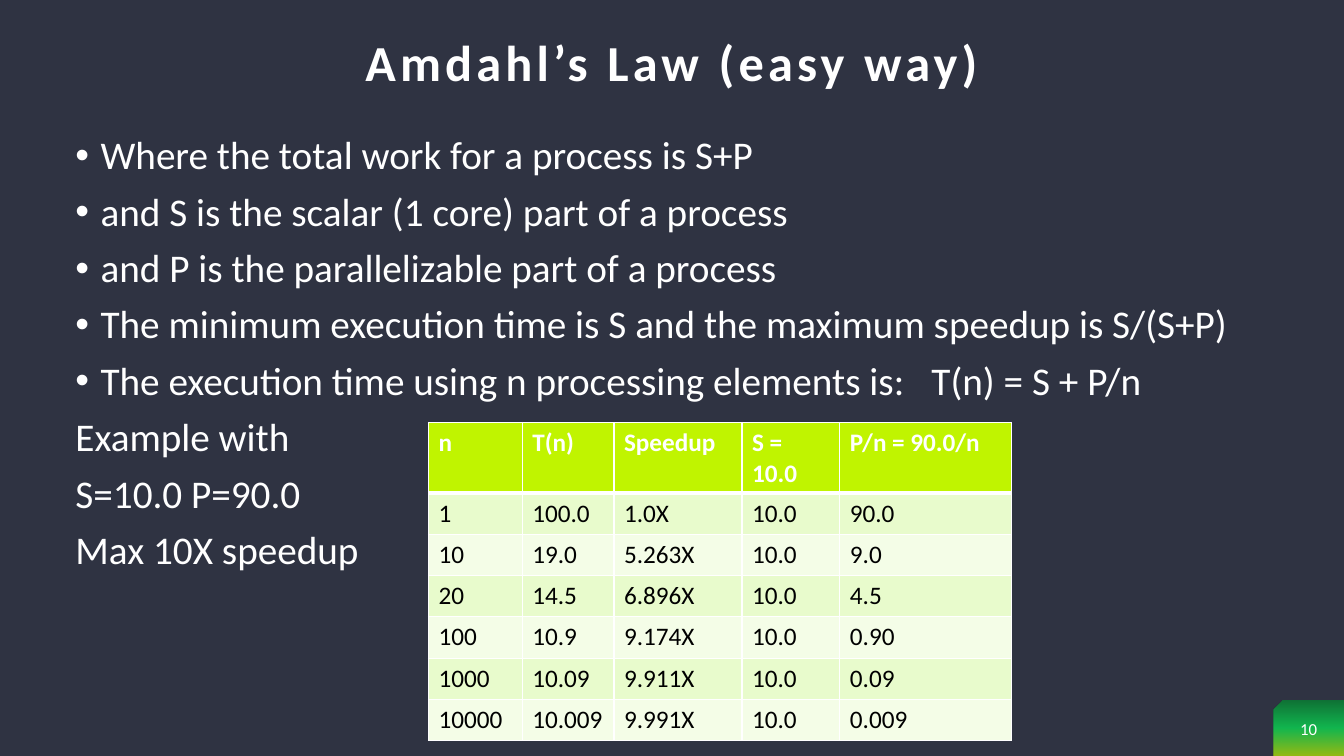
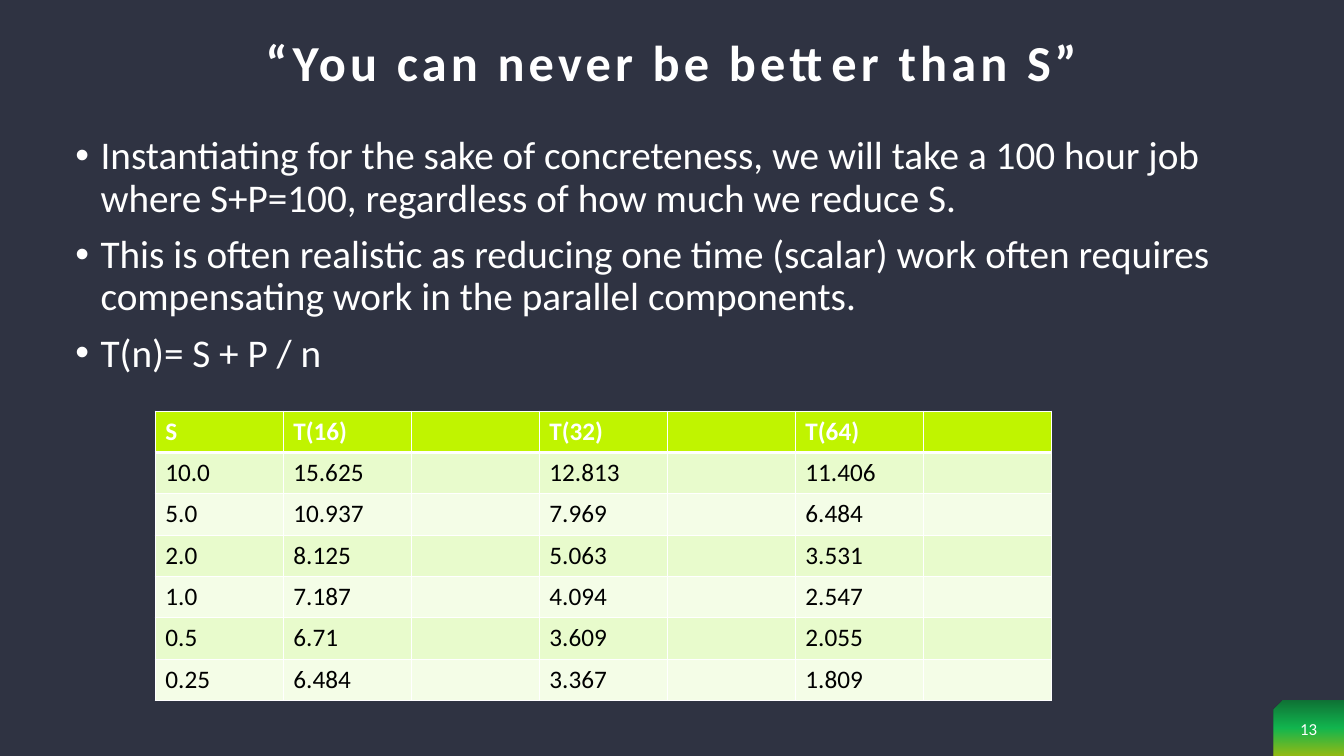
from dataclasses import dataclass

from lxml import etree
from pptx import Presentation
from pptx import util as u
from pptx.dml.color import RGBColor
from pptx.enum import shapes, text
from pptx.oxml import parse_xml
from pptx.oxml.ns import nsdecls, qn


@dataclass(frozen=True)
class Theme:
    font: str = "Calibri"
    background: str = "2F3342"
    light: str = "FFFFFF"
    dark: str = "000000"
    header: str = "C0F400"
    bands: tuple = ("E8FBCC", "F4FDE7")
    badge: tuple = ((0, "038B30"), (50, "05EE55"), (100, "C0F400"))
    badge_opacity: int = 70
    title_size: int = 36
    body_size: int = 28
    table_size: int = 18
    number_size: int = 12
    title_spacing: int = 3
    line_spacing: float = 0.9


class Deck:
    """Holds the style and the slide being built."""

    def __init__(self, theme):
        self.theme = theme
        self.prs = Presentation()
        self.prs.slide_width = u.Inches(13.33)
        self.prs.slide_height = u.Inches(7.5)
        self.slide = None

    def new_slide(self, title, number):
        self.slide = self.prs.slides.add_slide(self.prs.slide_layouts[6])
        fill = self.slide.background.fill
        fill.solid()
        fill.fore_color.rgb = RGBColor.from_string(self.theme.background)
        self.badge(number)
        self.title(title)

    def style(self, paragraph, size, color=None, bold=False):
        font = paragraph.font
        font.name, font.size, font.bold = self.theme.font, u.Pt(size), bold
        font.color.rgb = RGBColor.from_string(color or self.theme.light)

    def frame(self, left, top, width, height, anchor=text.MSO_ANCHOR.TOP):
        box = self.slide.shapes.add_textbox(
            u.Inches(left), u.Inches(top), u.Inches(width), u.Inches(height))
        box.text_frame.word_wrap = True
        box.text_frame.vertical_anchor = anchor
        return box.text_frame

    def centred(self, words, size, *place, bold=False):
        line = self.frame(*place, anchor=text.MSO_ANCHOR.MIDDLE).paragraphs[0]
        line.text = words
        line.alignment = text.PP_ALIGN.CENTER
        self.style(line, size, bold=bold)
        return line

    def title(self, words):
        line = self.centred(words, self.theme.title_size, 0.65, 0, 12.03, 1.3, bold=True)
        line.line_spacing = self.theme.line_spacing
        spacing = str(self.theme.title_spacing * 100)
        line.runs[0].font._element.set("spc", spacing)

    def badge(self, number):
        corner = self.slide.shapes.add_shape(
            shapes.MSO_SHAPE.SNIP_1_RECTANGLE,
            u.Inches(12.63), u.Inches(6.95), u.Inches(0.7), u.Inches(0.55))
        corner.shadow.inherit = False
        corner.line.fill.background()
        corner.fill.background()
        props = corner._element.spPr
        props.find(qn("a:xfrm")).set("flipH", "1")
        # Three-stop translucent gradient, running downwards
        stops = "".join(
            f'<a:gs pos="{pos * 1000}"><a:srgbClr val="{color}">'
            f'<a:alpha val="{self.theme.badge_opacity * 1000}"/></a:srgbClr></a:gs>'
            for pos, color in self.theme.badge)
        props.replace(props.find(qn("a:noFill")), parse_xml(
            f'<a:gradFill {nsdecls("a")} rotWithShape="1"><a:gsLst>{stops}</a:gsLst>'
            '<a:lin ang="5400000" scaled="0"/></a:gradFill>'))
        self.centred(str(number), self.theme.number_size, 12.63, 7.01, 0.7, 0.45)

    def body(self, bullets, plain=(), tab=None):
        frame = self.frame(0.65, 1.3, 12.03, 5.45)
        for i, words in enumerate([*bullets, *plain]):
            line = frame.paragraphs[0] if i == 0 else frame.add_paragraph()
            line.text = words
            line.line_spacing = self.theme.line_spacing
            line.space_before = u.Pt(10)
            self.style(line, self.theme.body_size)
            if i < len(bullets):
                self.bullet(line, tab if "\t" in words else None)

    def bullet(self, line, tab):
        props = line._p.get_or_add_pPr()
        props.set("marL", str(u.Inches(0.25)))
        props.set("indent", str(-u.Inches(0.25)))
        defaults = props.find(qn("a:defRPr"))
        defaults.addprevious(parse_xml(f'<a:buFont {nsdecls("a")} typeface="Arial"/>'))
        defaults.addprevious(parse_xml(f'<a:buChar {nsdecls("a")} char="•"/>'))
        if tab:
            defaults.addprevious(parse_xml(
                f'<a:tabLst {nsdecls("a")}><a:tab pos="{u.Inches(tab)}" algn="l"/></a:tabLst>'))

    def table(self, left, top, widths, rows, header_height=0.41, row_height=0.41):
        heights = [header_height] + [row_height] * (len(rows) - 1)
        grid = self.slide.shapes.add_table(
            len(rows), len(widths), u.Inches(left), u.Inches(top),
            u.Inches(sum(widths)), u.Inches(sum(heights))).table
        grid.horz_banding = False
        for column, width in zip(grid.columns, widths):
            column.width = u.Inches(width)
        for r, (values, height) in enumerate(zip(rows, heights)):
            grid.rows[r].height = u.Inches(height)
            for c, value in enumerate(values):
                self.cell(grid.cell(r, c), value, r)

    def cell(self, cell, value, row):
        theme = self.theme
        heading = row == 0
        cell.fill.solid()
        cell.fill.fore_color.rgb = RGBColor.from_string(
            theme.header if heading else theme.bands[(row - 1) % 2])
        line = cell.text_frame.paragraphs[0]
        line.text = value
        self.style(line, theme.table_size, theme.light if heading else theme.dark, heading)
        # Thin borders, with a thick rule under the header
        thick = {"lnB": row == 0, "lnT": row == 1}
        props = cell._tc.get_or_add_tcPr()
        for i, side in enumerate(("lnL", "lnR", "lnT", "lnB")):
            width = u.Pt(3 if thick.get(side) else 1)
            border = etree.Element(qn(f"a:{side}"), w=str(width))
            solid = etree.SubElement(border, qn("a:solidFill"))
            etree.SubElement(solid, qn("a:srgbClr"), val=theme.light)
            props.insert(i, border)


def main():
    deck = Deck(Theme())

    # Speedup by number of processing elements
    deck.new_slide("Amdahl’s Law (easy way)", 10)
    deck.body(
        ["Where the total work for a process is S+P",
         "and S is the scalar (1 core) part of a process",
         "and P is the parallelizable part of a process",
         "The minimum execution time is S and the maximum speedup is S/(S+P)",
         "The execution time using n processing elements is:\tT(n) = S + P/n"],
        ["Example with", "S=10.0 P=90.0", "Max 10X speedup"],
        tab=8.49)
    speedups = [
        ("1", "100.0", "1.0X", "90.0"),
        ("10", "19.0", "5.263X", "9.0"),
        ("20", "14.5", "6.896X", "4.5"),
        ("100", "10.9", "9.174X", "0.90"),
        ("1000", "10.09", "9.911X", "0.09"),
        ("10000", "10.009", "9.991X", "0.009"),
    ]
    deck.table(
        4.25, 4.19, [0.93, 0.91, 1.27, 0.97, 1.7],
        [("n", "T(n)", "Speedup", "S = 10.0", "P/n = 90.0/n")]
        + [(n, time, speedup, "10.0", share) for n, time, speedup, share in speedups],
        header_height=0.7)

    # Execution time as the scalar part shrinks
    deck.new_slide("“You can never be better than S”", 13)
    deck.body([
        "Instantiating for the sake of concreteness, we will take a 100 hour job "
        "where S+P=100, regardless of how much we reduce S.",
        "This is often realistic as reducing one time (scalar) work often requires "
        "compensating work in the parallel components.",
        "T(n)= S + P / n"])
    times = [
        ("S", "T(16)", "T(32)", "T(64)"),
        ("10.0", "15.625", "12.813", "11.406"),
        ("5.0", "10.937", "7.969", "6.484"),
        ("2.0", "8.125", "5.063", "3.531"),
        ("1.0", "7.187", "4.094", "2.547"),
        ("0.5", "6.71", "3.609", "2.055"),
        ("0.25", "6.484", "3.367", "1.809"),
    ]
    deck.table(
        1.54, 4.08, [1.27] * 7,
        [(scalar, t16, "", t32, "", t64, "") for scalar, t16, t32, t64 in times])

    deck.prs.save("out.pptx")


if __name__ == "__main__":
    main()
